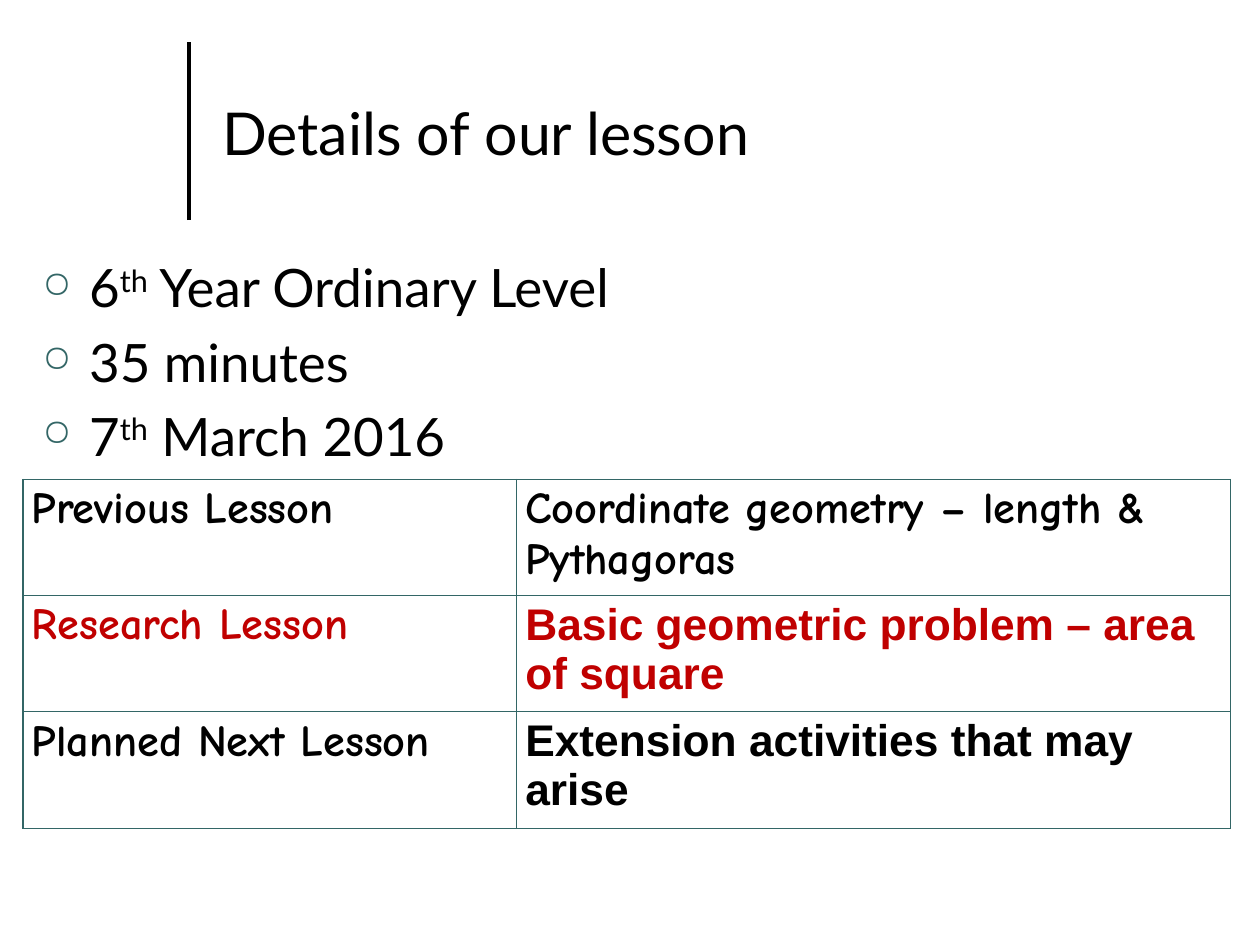
"""Build the lesson details slide."""
from dataclasses import dataclass

import lxml.etree
import pptx
import pptx.dml.color
import pptx.enum.shapes
import pptx.enum.text
import pptx.oxml.ns
import pptx.util

Pt = pptx.util.Pt
qn = pptx.oxml.ns.qn
BLACK, RED, TEAL, WHITE = "000000", "C00000", "336666", "FFFFFF"
BODY_FONT, HAND_FONT, PLAIN_FONT = "Lato", "Comic Neue", "Arial"


@dataclass(frozen=True)
class Detail:
    lead: str
    ordinal: str = ""
    rest: str = ""


@dataclass(frozen=True)
class Lesson:
    stage: str
    topic: str
    topic_font: str
    color: str = BLACK


DETAILS = [
    Detail("6", "th", " Year Ordinary Level"),
    Detail("35 minutes"),
    Detail("7", "th", " March 2016"),
]
LESSONS = [
    Lesson("Previous Lesson", "Coordinate geometry – length & Pythagoras", HAND_FONT),
    Lesson("Research Lesson", "Basic geometric problem – area of square", PLAIN_FONT, RED),
    Lesson("Planned Next Lesson", "Extension activities that may arise", PLAIN_FONT),
]


def rgb(color: str) -> pptx.dml.color.RGBColor:
    return pptx.dml.color.RGBColor.from_string(color)


def style(span, font: str, size: float, color: str = BLACK, bold: bool = False) -> None:
    span.font.name = font
    span.font.size = Pt(size)
    span.font.bold = bold
    span.font.color.rgb = rgb(color)


def add_box(page, left: float, top: float, width: float, height: float):
    frame = page.shapes.add_textbox(Pt(left), Pt(top), Pt(width), Pt(height)).text_frame
    frame.word_wrap = True
    frame.margin_left = frame.margin_right = Pt(10)
    frame.margin_top = frame.margin_bottom = Pt(5)
    return frame


def add_title(page) -> None:
    rule = page.shapes.add_connector(
        pptx.enum.shapes.MSO_CONNECTOR.STRAIGHT, Pt(153.5), Pt(179), Pt(153.5), Pt(34))
    rule.line.color.rgb = rgb(BLACK)
    rule.line.width = Pt(3)
    lxml.etree.SubElement(rule._element.spPr, qn("a:effectLst"))
    frame = add_box(page, 170.6, 21.6, 785, 171.4)
    frame.vertical_anchor = pptx.enum.text.MSO_ANCHOR.MIDDLE
    frame.text = "Details of our lesson"
    style(frame.paragraphs[0].runs[0], BODY_FONT, 48)


def add_bullet(para) -> None:
    properties = para._p.get_or_add_pPr()
    properties.set("marL", str(Pt(38)))
    properties.set("indent", str(-Pt(38)))
    color = lxml.etree.SubElement(properties, qn("a:buClr"))
    lxml.etree.SubElement(color, qn("a:srgbClr"), val=TEAL)
    lxml.etree.SubElement(properties, qn("a:buSzPct"), val="70000")
    lxml.etree.SubElement(properties, qn("a:buChar"), char="○")


def add_details(page) -> None:
    frame = add_box(page, 24.5, 202.3, 958, 510)
    for index, detail in enumerate(DETAILS):
        para = frame.add_paragraph() if index else frame.paragraphs[0]
        add_bullet(para)
        if index:
            para.space_before = Pt(8.6)
        for text in filter(None, (detail.lead, detail.ordinal, detail.rest)):
            span = para.add_run()
            span.text = text
            style(span, BODY_FONT, 43)
            if text == detail.ordinal:
                span.font._element.set("baseline", "30000")


def add_borders(cell) -> None:
    properties = cell._tc.get_or_add_tcPr()
    for index, side in enumerate(("a:lnL", "a:lnR", "a:lnT", "a:lnB")):
        line = lxml.etree.Element(qn(side), w=str(Pt(1)))
        fill = lxml.etree.SubElement(line, qn("a:solidFill"))
        lxml.etree.SubElement(fill, qn("a:srgbClr"), val=TEAL)
        properties.insert(index, line)


def fill_cell(cell, text: str, font: str, color: str) -> None:
    cell.text = text
    style(cell.text_frame.paragraphs[0].runs[0], font, 36, color, bold=True)
    cell.fill.solid()
    cell.fill.fore_color.rgb = rgb(WHITE)
    add_borders(cell)


def add_lessons(page) -> None:
    widths, height = (401, 580), 94.5
    table = page.shapes.add_table(
        len(LESSONS), len(widths), Pt(18.7), Pt(389.5),
        Pt(sum(widths)), Pt(height * len(LESSONS))).table
    table.first_row = table.horz_banding = False
    for column, width in zip(table.columns, widths):
        column.width = Pt(width)
    for index, lesson in enumerate(LESSONS):
        table.rows[index].height = Pt(height)
        fill_cell(table.cell(index, 0), lesson.stage, HAND_FONT, lesson.color)
        fill_cell(table.cell(index, 1), lesson.topic, lesson.topic_font, lesson.color)


def main() -> None:
    deck = pptx.Presentation()
    deck.slide_width, deck.slide_height = Pt(1024), Pt(768)
    page = deck.slides.add_slide(deck.slide_layouts[6])
    add_title(page)
    add_details(page)
    add_lessons(page)
    deck.save("out.pptx")


if __name__ == "__main__":
    main()
